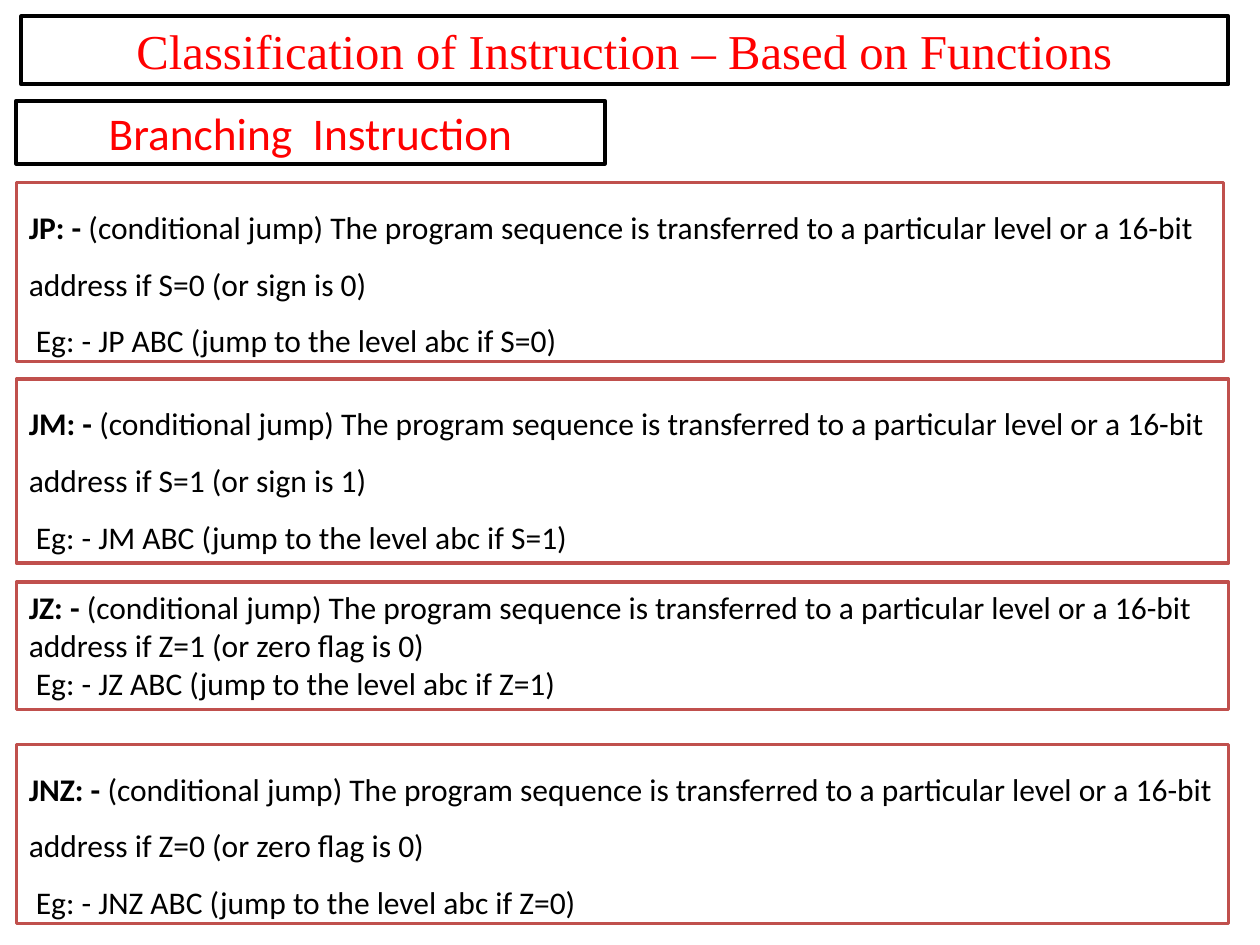
"""Build the slide on branching instructions."""
from pptx import Presentation
from pptx.dml.color import RGBColor
from pptx.enum.shapes import MSO_SHAPE
from pptx.enum.text import MSO_ANCHOR, PP_ALIGN
from pptx.util import Inches, Pt

COLORS = {"head": "FF0000", "text": "000000", "frame": "000000",
          "edge": "C0504D", "fill": "FFFFFF"}

HEADS = [
    ("Classification of Instruction – Based on Functions",
     (0.17, 0.13, 9.58, 0.54), "Times New Roman", 27.8),
    ("Branching  Instruction", (0.13, 0.8, 4.67, 0.5), "Calibri", 25.9),
]

JUMPS = [
    ("JP", "S=0", "sign is 0", (0.13, 1.45, 9.58, 1.42), 1.5),
    ("JM", "S=1", "sign is 1", (0.13, 3.01, 9.62, 1.46), 1.5),
    ("JZ", "Z=1", "zero flag is 0", (0.13, 4.62, 9.62, 1.01), 1.0),
    ("JNZ", "Z=0", "zero flag is 0", (0.13, 5.91, 9.62, 1.42), 1.5),
]


def color(name):
    return RGBColor.from_string(COLORS[name])


def add_box(slide, place, edge, width, anchor):
    box = slide.shapes.add_shape(MSO_SHAPE.RECTANGLE, *map(Inches, place))
    box.shadow.inherit = False
    box.fill.solid()
    box.fill.fore_color.rgb = color("fill")
    box.line.color.rgb = color(edge)
    box.line.width = Pt(width)
    frame = box.text_frame
    frame.word_wrap = True
    frame.vertical_anchor = anchor
    return frame


def add_run(para, text, font, size, tint, bold=False):
    run = para.add_run()
    run.text = text
    run.font.name = font
    run.font.size = Pt(size)
    run.font.bold = bold
    run.font.color.rgb = color(tint)


def add_head(slide, text, place, font, size):
    frame = add_box(slide, place, "frame", 2.25, MSO_ANCHOR.MIDDLE)
    para = frame.paragraphs[0]
    para.alignment = PP_ALIGN.CENTER
    para.space_before = Pt(size * 0.2)
    add_run(para, text, font, size, "head")


def add_jump(slide, code, test, flag, place, pitch):
    frame = add_box(slide, place, "edge", 2, MSO_ANCHOR.TOP)
    rule, sample = frame.paragraphs[0], frame.add_paragraph()
    for para in (rule, sample):
        para.alignment = PP_ALIGN.LEFT
        para.line_spacing = pitch
    add_run(rule, f"{code}: -", "Calibri", 18, "text", True)
    add_run(rule, " (conditional jump) The program sequence is transferred to a "
            f"particular level or a 16-bit address if {test} (or {flag})",
            "Calibri", 18, "text")
    add_run(sample, f" Eg: - {code} ABC (jump to the level abc if {test})",
            "Calibri", 18, "text")


def main():
    deck = Presentation()
    deck.slide_width, deck.slide_height = Inches(10), Inches(7.5)
    slide = deck.slides.add_slide(deck.slide_layouts[6])
    for head in HEADS:
        add_head(slide, *head)
    for jump in JUMPS:
        add_jump(slide, *jump)
    deck.save("out.pptx")


if __name__ == "__main__":
    main()
